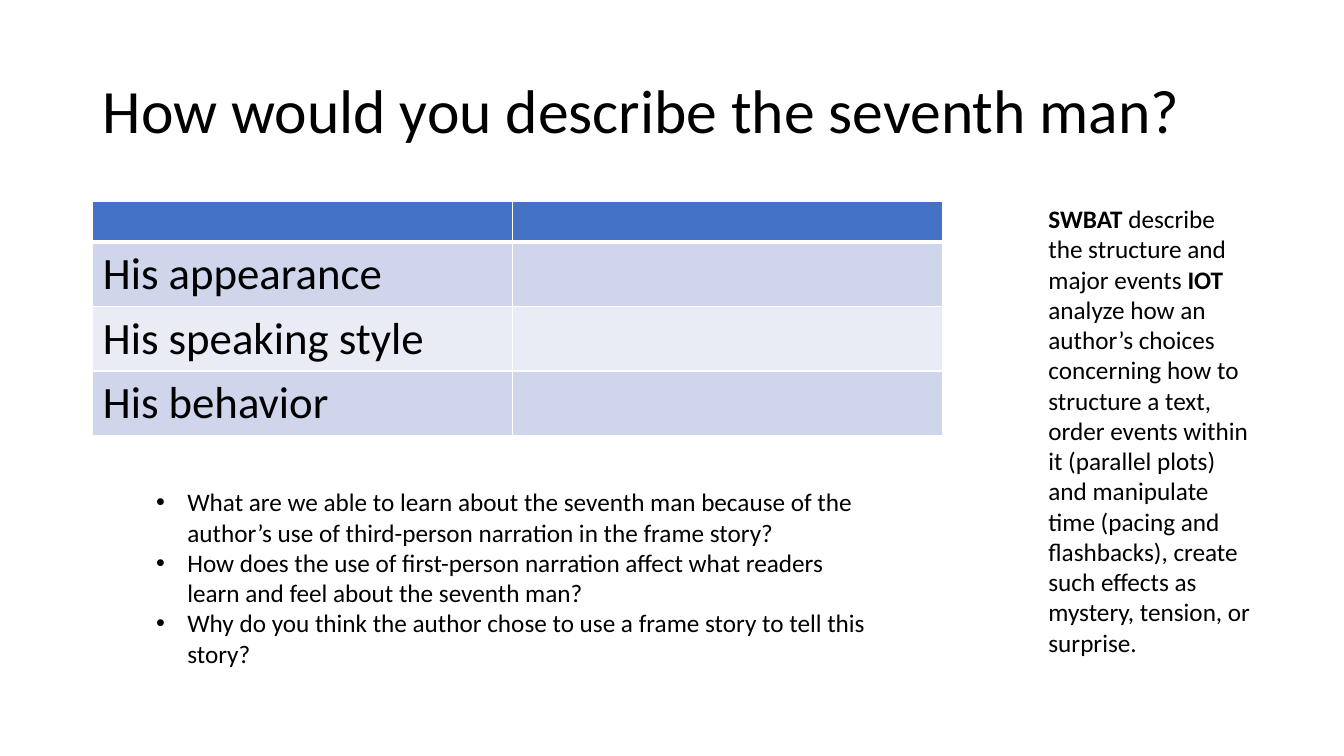
from dataclasses import dataclass

from lxml.etree import SubElement
from pptx import Presentation
from pptx.dml.color import RGBColor
from pptx.enum.text import MSO_ANCHOR
from pptx.oxml.ns import qn
from pptx.util import Inches, Pt


@dataclass(frozen=True)
class Theme:
    font: str = "Calibri"
    text: str = "000000"
    header: str = "4472C4"
    bands: tuple = ("CFD5EA", "E9EBF5")
    border: str = "FFFFFF"
    title_size: int = 44
    table_size: int = 32
    body_size: int = 18
    thin_line: int = 1
    thick_line: int = 3


THEME = Theme()

TITLE = "How would you describe the seventh man?"
TRAITS = ["His appearance", "His speaking style", "His behavior"]
QUESTIONS = [
    "What are we able to learn about the seventh man because of the "
    "author’s use of third-person narration in the frame story?",
    "How does the use of first-person narration affect what readers "
    "learn and feel about the seventh man?",
    "Why do you think the author chose to use a frame story to tell this story?",
]
# Each part of the objective: wording, bold
OBJECTIVE = [
    ("SWBAT ", True),
    ("describe the structure and major events ", False),
    ("IOT ", True),
    ("analyze how an author’s choices concerning how to structure a text, "
     "order events within it (parallel plots) and manipulate time (pacing and "
     "flashbacks), create such effects as mystery, tension, or surprise.", False),
]


def add_run(paragraph, text, size, bold=False):
    run = paragraph.add_run()
    run.text = text
    run.font.name = THEME.font
    run.font.size = Pt(size)
    run.font.bold = bold
    run.font.color.rgb = RGBColor.from_string(THEME.text)


def add_text_frame(slide, box):
    text_frame = slide.shapes.add_textbox(*map(Inches, box)).text_frame
    text_frame.word_wrap = True
    return text_frame


def add_bullet(paragraph, indent):
    properties = paragraph._p.get_or_add_pPr()
    properties.set("marL", str(Inches(indent)))
    properties.set("indent", str(-Inches(indent)))
    SubElement(properties, qn("a:buFont"), typeface="Arial")
    SubElement(properties, qn("a:buChar"), char="•")


def style_cell(cell, fill, top, bottom):
    properties = cell._tc.get_or_add_tcPr()
    widths = {"L": THEME.thin_line, "R": THEME.thin_line, "T": top, "B": bottom}
    for side, width in widths.items():
        line = SubElement(properties, qn(f"a:ln{side}"), w=str(Pt(width)))
        solid = SubElement(line, qn("a:solidFill"))
        SubElement(solid, qn("a:srgbClr"), val=THEME.border)
    cell.fill.solid()
    cell.fill.fore_color.rgb = RGBColor.from_string(fill)


# Title across the top
def add_title(slide, box):
    text_frame = add_text_frame(slide, box)
    text_frame.vertical_anchor = MSO_ANCHOR.MIDDLE
    paragraph = text_frame.paragraphs[0]
    paragraph.line_spacing = 0.9
    add_run(paragraph, TITLE, THEME.title_size)


# Table of traits with an empty column for answers
def add_trait_table(slide, box, label_width=4.16, header_height=0.4):
    left, top, width, height = box
    labels = ["", *TRAITS]
    frame = slide.shapes.add_table(len(labels), 2, *map(Inches, box))
    table = frame.table
    table.columns[0].width = Inches(label_width)
    table.columns[1].width = Inches(width - label_width)
    row_height = (height - header_height) / len(TRAITS)

    for index, label in enumerate(labels):
        row = table.rows[index]
        row.height = Inches(row_height if index else header_height)
        fill = THEME.bands[(index - 1) % 2] if index else THEME.header
        line_above = THEME.thick_line if index == 1 else THEME.thin_line
        line_below = THEME.thick_line if index == 0 else THEME.thin_line
        for cell in row.cells:
            style_cell(cell, fill, line_above, line_below)
        if label:
            paragraph = row.cells[0].text_frame.paragraphs[0]
            add_run(paragraph, label, THEME.table_size)


# Discussion questions below the table
def add_questions(slide, box):
    text_frame = add_text_frame(slide, box)
    for index, question in enumerate(QUESTIONS):
        paragraph = text_frame.add_paragraph() if index else text_frame.paragraphs[0]
        add_bullet(paragraph, 0.31)
        add_run(paragraph, question, THEME.body_size)


# Lesson objective on the right
def add_objective(slide, box):
    paragraph = add_text_frame(slide, box).paragraphs[0]
    for text, bold in OBJECTIVE:
        add_run(paragraph, text, THEME.body_size, bold)


def main():
    presentation = Presentation()
    presentation.slide_width = Inches(13.33)
    presentation.slide_height = Inches(7.5)
    slide = presentation.slides.add_slide(presentation.slide_layouts[6])
    add_title(slide, (0.92, 0.4, 11.5, 1.45))
    add_trait_table(slide, (0.92, 2, 8.43, 2.32))
    add_questions(slide, (1.45, 4.78, 7.36, 2.22))
    add_objective(slide, (10.3, 1.97, 2.23, 4.95))
    presentation.save("out.pptx")


if __name__ == "__main__":
    main()
